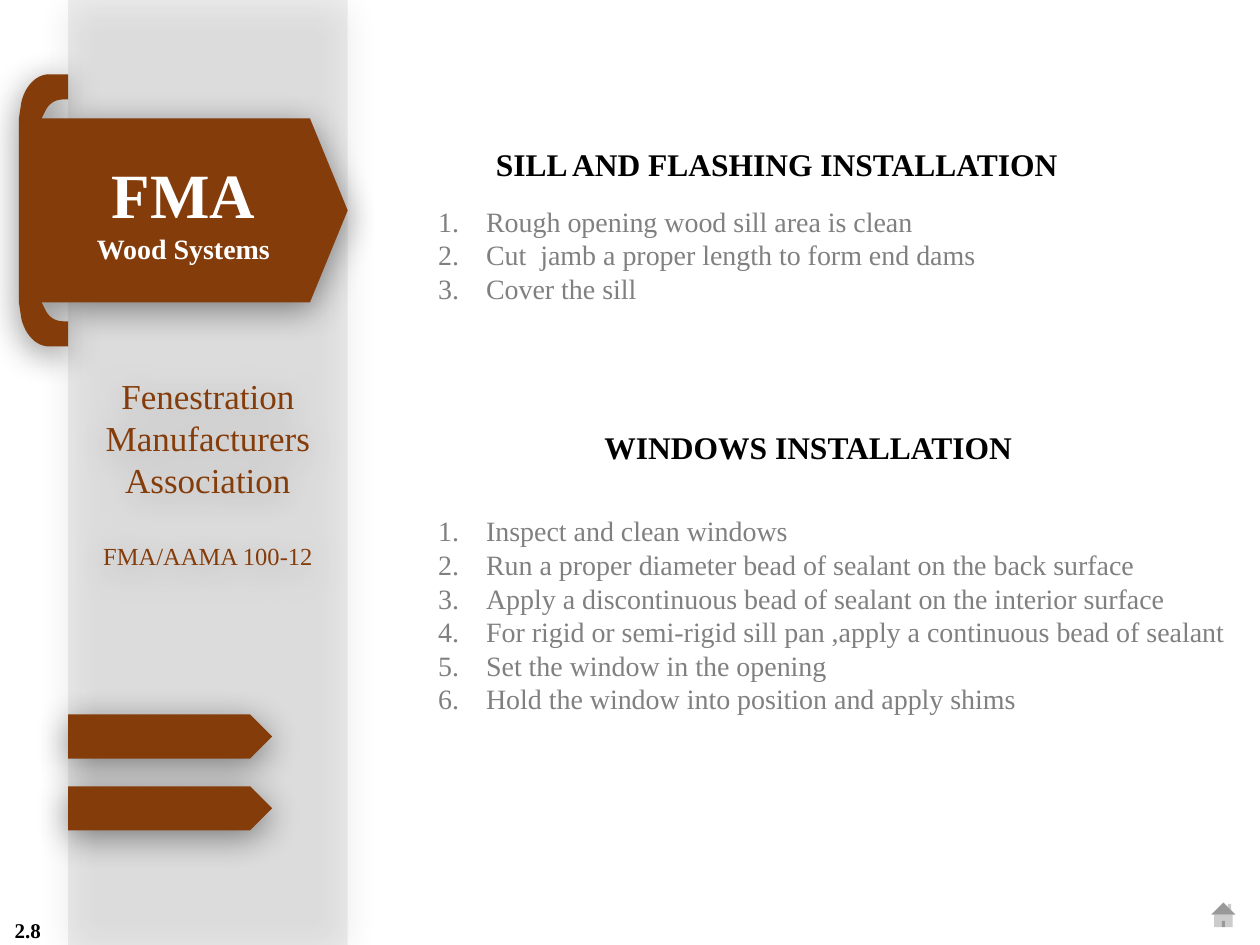
from lxml import etree
from pptx import Presentation
from pptx import util as u
from pptx.dml.color import RGBColor
from pptx.enum import shapes, text
from pptx.oxml import ns

COLOURS = {
    "brown": "843C0B",
    "band": "AFABAB",
    "grey": "808080",
    "white": "FFFFFF",
    "black": "000000",
}
FONT = "Times New Roman"
CENTRE = text.PP_ALIGN.CENTER
PLAIN_FRAME = {"word_wrap": True, "vertical_anchor": text.MSO_ANCHOR.TOP}
MIDDLE_FRAME = {"word_wrap": True, "vertical_anchor": text.MSO_ANCHOR.MIDDLE}
TITLE_FRAME = {"word_wrap": False, "vertical_anchor": text.MSO_ANCHOR.TOP}


def set_values(target, values):
    for name, value in values.items():
        setattr(target, name, value)


def add_child(parent, tag, **attributes):
    return etree.SubElement(parent, ns.qn(tag), attributes)


def paint(shape, colour, opacity=None, shadow=True):
    shape.fill.solid()
    shape.fill.fore_color.rgb = RGBColor.from_string(COLOURS[colour])
    shape.line.fill.background()
    shape.shadow.inherit = False
    properties = shape._element.spPr
    if opacity is not None:
        solid = properties.find(ns.qn("a:solidFill"))
        add_child(solid[0], "a:alpha", val=str(opacity * 1000))
    if shadow:
        effects = properties.find(ns.qn("a:effectLst"))
        outer = add_child(effects, "a:outerShdw", blurRad=str(u.Pt(20)),
                          dist=str(u.Pt(4)), dir="5400000", algn="ctr", rotWithShape="0")
        tint = add_child(outer, "a:srgbClr", val=COLOURS["black"])
        add_child(tint, "a:alpha", val="43000")


def write(shape, lines, colour, frame_values, para_values, numbered=False):
    frame = shape.text_frame
    set_values(frame, frame_values)
    for index, (words, size, bold, before) in enumerate(lines):
        para = frame.paragraphs[0] if index == 0 else frame.add_paragraph()
        set_values(para, para_values)
        if before:
            para.space_before = u.Pt(before)
        if numbered:
            properties = para._p.get_or_add_pPr()
            indents = {"marL": u.Inches(0.38), "indent": u.Inches(-0.38)}
            for name, value in indents.items():
                properties.set(name, str(value))
            add_child(properties, "a:buFont", typeface="+mj-lt")
            add_child(properties, "a:buAutoNum", type="arabicPeriod")
        span = para.add_run()
        span.text = words
        set_values(span.font, {"name": FONT, "size": u.Pt(size), "bold": bold})
        span.font.color.rgb = RGBColor.from_string(COLOURS[colour])


def inches(*lengths):
    return [u.Inches(length) for length in lengths]


def add_side_band(page, left, top, width, height):
    band = page.shapes.add_shape(shapes.MSO_SHAPE.RECTANGLE, *inches(left, top, width, height))
    paint(band, "band", opacity=20)
    lines = [("Fenestration Manufacturers Association", 20, False, 0),
             ("FMA/AAMA 100-12", 14, False, 23)]
    write(band, lines, "brown", MIDDLE_FRAME, {"alignment": CENTRE})
    for row in range(2):
        tag = page.shapes.add_shape(shapes.MSO_SHAPE.PENTAGON,
                                    *inches(left, top + 5.67 + row * 0.57, 1.62, 0.35))
        paint(tag, "brown")


def curve(start, first, second, end, steps=12):
    points = []
    for step in range(1, steps + 1):
        t = step / steps
        weights = ((1 - t) ** 3, 3 * t * (1 - t) ** 2, 3 * t * t * (1 - t), t ** 3)
        points.append(tuple(sum(w * p[axis] for w, p in zip(weights, (start, first, second, end)))
                            for axis in (0, 1)))
    return points


def add_banner(page, left, top, width, height):
    upper = [(width, height / 2), (width - 0.3, 0.35), (0.18, 0.35), (0.21, 0.29)]
    upper += curve((0.21, 0.29), (0.24, 0.23), (0.29, 0.2), (0.35, 0.2))
    upper += [(0.39, 0.2), (0.39, 0), (0.24, 0)]
    upper += curve((0.24, 0), (0.14, 0), (0.05, 0.09), (0.02, 0.22))
    upper.append((0, 0.35))
    lower = [(x, height - y) for x, y in reversed(upper[1:])]
    outline = [inches(left + x, top + y) for x, y in upper + lower]
    builder = page.shapes.build_freeform(*outline[0])
    builder.add_line_segments(outline[1:], close=True)
    banner = builder.convert_to_shape()
    paint(banner, "brown")
    lines = [("FMA", 36, True, 0), ("Wood Systems", 16, True, 0)]
    write(banner, lines, "white", MIDDLE_FRAME, {"alignment": CENTRE})


def add_title(page, words, left, top, width, height):
    box = page.shapes.add_textbox(*inches(left, top, width, height))
    write(box, [(words, 18, True, 0)], "black", TITLE_FRAME, {"alignment": CENTRE})


def add_steps(page, steps, left, top, width, height):
    box = page.shapes.add_textbox(*inches(left, top, width, height))
    lines = [(step, 16, False, 0) for step in steps]
    write(box, lines, "grey", PLAIN_FRAME, {"alignment": text.PP_ALIGN.LEFT}, numbered=True)


def add_footer(page, left, top, width, height):
    number = page.shapes.add_textbox(*inches(left, top + height - 0.25, 0.44, 0.26))
    write(number, [("2.8", 12, True, 0)], "black", MIDDLE_FRAME, {"alignment": CENTRE})
    home = page.shapes.add_shape(shapes.MSO_SHAPE.ACTION_BUTTON_HOME,
                                 *inches(left + width - 0.42, top, 0.26, 0.32))
    paint(home, "white", shadow=False)


def main():
    deck = Presentation()
    set_values(deck, {"slide_width": u.Inches(10), "slide_height": u.Inches(7.5)})
    page = deck.slides.add_slide(deck.slide_layouts[6])
    add_side_band(page, 0.54, 0, 2.22, 7.5)
    add_banner(page, 0.15, 0.59, 2.61, 2.16)
    add_title(page, "SILL AND FLASHING INSTALLATION", 3.75, 1.1, 4.83, 0.4)
    add_steps(page, [
        "Rough opening wood sill area is clean",
        "Cut  jamb a proper length to form end dams",
        "Cover the sill",
    ], 3.38, 1.57, 6.5, 1.18)
    add_title(page, "WINDOWS INSTALLATION", 4.68, 3.35, 3.47, 0.4)
    add_steps(page, [
        "Inspect and clean windows",
        "Run a proper diameter bead of sealant on the back surface",
        "Apply a discontinuous bead of sealant on the interior surface",
        "For rigid or semi-rigid sill pan ,apply a continuous bead of sealant",
        "Set the window in the opening",
        "Hold the window into position and apply shims",
    ], 3.38, 4.03, 6.5, 1.99)
    add_footer(page, 0, 7.1, 10, 0.4)
    deck.save("out.pptx")


if __name__ == "__main__":
    main()
